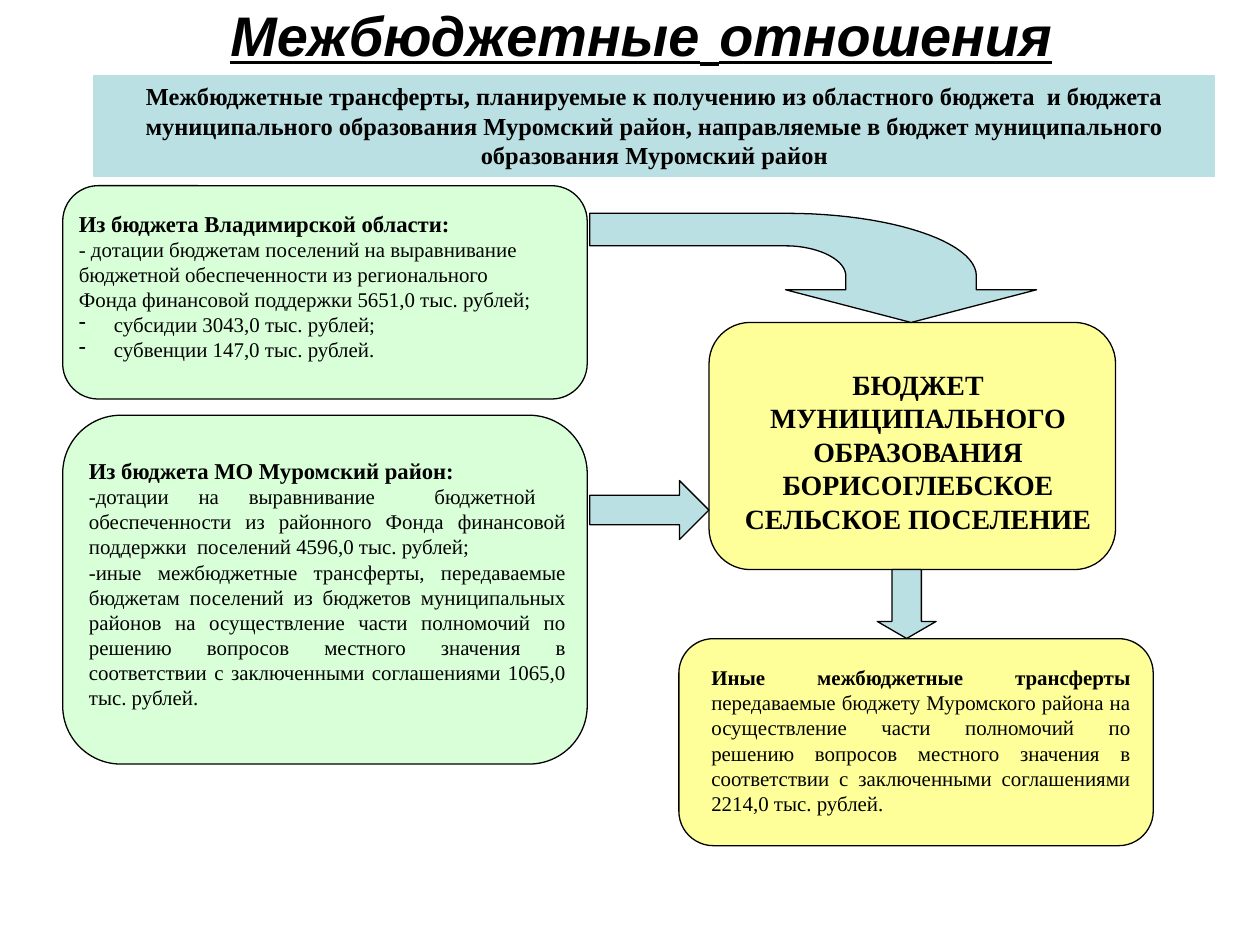
from lxml.etree import SubElement
from pptx import Presentation
from pptx.dml.color import RGBColor
from pptx.enum.shapes import MSO_SHAPE
from pptx.enum.text import MSO_ANCHOR, PP_ALIGN
from pptx.oxml.ns import qn
from pptx.util import Inches, Pt

# Content: a paragraph is (alignment, size, bulleted, [(text, bold), ...])
LEFT, CENTER, JUSTIFY = PP_ALIGN.LEFT, PP_ALIGN.CENTER, PP_ALIGN.JUSTIFY
TITLE = [("Межбюджетные", 32), (" ", 40), ("отношения", 32)]
HEADER = [(CENTER, 14, False, [(
    "Межбюджетные трансферты, планируемые к получению из областного бюджета  и бюджета "
    "муниципального образования Муромский район, направляемые в бюджет муниципального "
    "образования Муромский район", True)])]
REGION = [
    (LEFT, 13, False, [("Из бюджета Владимирской области:", True)]),
    (LEFT, 12, False, [(
        "- дотации бюджетам поселений на выравнивание бюджетной обеспеченности из "
        "регионального Фонда финансовой поддержки 5651,0 тыс. рублей;", False)]),
    (LEFT, 12, True, [("субсидии 3043,0 тыс. рублей;", False)]),
    (LEFT, 12, True, [("субвенции 147,0 тыс. рублей.", False)]),
]
DISTRICT = [
    (LEFT, 13, False, [("Из бюджета МО Муромский район:", True)]),
    (JUSTIFY, 12, False, [(
        "-дотации на выравнивание  бюджетной  обеспеченности из районного Фонда "
        "финансовой поддержки  поселений 4596,0 тыс. рублей;", False)]),
    (JUSTIFY, 12, False, [(
        "-иные межбюджетные трансферты, передаваемые бюджетам поселений из бюджетов "
        "муниципальных районов на осуществление части полномочий по решению вопросов "
        "местного значения в соответствии с заключенными соглашениями 1065,0 тыс. рублей.",
        False)]),
]
BUDGET = [(CENTER, 16, False, [(
    "БЮДЖЕТ МУНИЦИПАЛЬНОГО ОБРАЗОВАНИЯ БОРИСОГЛЕБСКОЕ СЕЛЬСКОЕ ПОСЕЛЕНИЕ", True)])]
OTHER = [(JUSTIFY, 12, False, [
    ("Иные межбюджетные трансферты ", True),
    ("передаваемые бюджету Муромского района на осуществление части полномочий по "
     "решению вопросов местного значения в соответствии с заключенными соглашениями "
     "2214,0 тыс. рублей.", False)])]

COLORS = {"ink": "000000", "green": "CCFFCC", "yellow": "FFFF99", "blue": "BBE0E3"}

# Places: left, top, width, height in percent of the slide
TITLE_PLACE = (5.88, 0, 90.04, 6.13)
HEADER_PLACE = (7.47, 8, 88.94, 10.8)
CARDS = [  # box place, colour, opacity, text place, paragraphs
    ((4.98, 19.73, 41.63, 22.67), "green", 74, (5.28, 21.6, 39.24, 17.6), REGION),
    ((4.98, 44.13, 41.63, 37.07), "green", 74, (6.08, 47.87, 39.84, 28.13), DISTRICT),
    ((56.27, 34.27, 32.27, 26.27), "yellow", 100, (57.87, 38.4, 29.98, 19.2), BUDGET),
    ((53.88, 67.87, 37.65, 22), "yellow", 100, (55.48, 70, 35.26, 17.33), OTHER),
]
ARROWS = [  # preset, place, head length
    (MSO_SHAPE.RIGHT_ARROW, (46.81, 51.07, 9.46, 6.27), 0.5),
    (MSO_SHAPE.DOWN_ARROW, (69.62, 60.53, 4.68, 7.33), 0.29),
]
# Bent arrow: corners and the two bends (start, two controls, end)
HEAD = [(72.31, 34.27), (82.27, 30.8), (77.49, 30.8)]
OUTER_BEND = [(77.49, 29.33), (77.49, 25.73), (70.72, 22.67), (62.35, 22.67)]
TAIL = [(46.81, 22.67), (46.81, 26.13)]
INNER_BEND = [(62.35, 26.13), (64.94, 26.13), (67.13, 27.6), (67.13, 29.33)]
HEAD_END = [(67.13, 30.8), (62.35, 30.8)]

deck = Presentation()
deck.slide_width, deck.slide_height = Inches(10.04), Inches(7.5)
page = deck.slides.add_slide(deck.slide_layouts[5])


def point(x, y):
    return round(deck.slide_width * x / 100), round(deck.slide_height * y / 100)


def area(place):
    return point(*place[:2]) + point(*place[2:])


def color(name):
    return RGBColor.from_string(COLORS[name])


def bend(controls, steps=24):
    """Points along a cubic curve."""
    for step in range(steps + 1):
        t = step / steps
        weights = ((1 - t) ** 3, 3 * t * (1 - t) ** 2, 3 * t * t * (1 - t), t ** 3)
        yield tuple(sum(w * c[axis] for w, c in zip(weights, controls)) for axis in (0, 1))


def paint(shape, fill, line="ink", opacity=100):
    shape.shadow.inherit = False
    shape.fill.solid()
    shape.fill.fore_color.rgb = color(fill)
    shape.line.color.rgb = color(line)
    shape.line.width = Pt(0.75)
    if opacity < 100:
        tint = shape._element.spPr.find(qn("a:solidFill")).find(qn("a:srgbClr"))
        SubElement(tint, qn("a:alpha"), val=str(opacity * 1000))


def write(shape, paragraphs):
    frame = shape.text_frame
    frame.word_wrap = True
    frame.vertical_anchor = MSO_ANCHOR.TOP
    for number, (alignment, size, bulleted, spans) in enumerate(paragraphs):
        para = frame.add_paragraph() if number else frame.paragraphs[0]
        para.alignment = alignment
        para.font.name = "Times New Roman"
        para.font.size = Pt(size)
        para.font.color.rgb = color("ink")
        if bulleted:
            properties = para._p.get_or_add_pPr()
            properties.set("marL", str(Inches(0.28)))
            properties.set("indent", str(-Inches(0.28)))
            bullet = properties.makeelement(qn("a:buChar"), {"char": "-"})
            properties.insert(0, bullet)
        for text, bold in spans:
            span = para.add_run()
            span.text = text
            span.font.bold = bold


# Title
title = page.shapes.title
title.left, title.top, title.width, title.height = area(TITLE_PLACE)
title.text_frame.vertical_anchor = MSO_ANCHOR.MIDDLE
para = title.text_frame.paragraphs[0]
para.alignment = CENTER
para.font.name = "Arial"
para.font.bold = para.font.italic = para.font.underline = True
para.font.color.rgb = color("ink")
for text, size in TITLE:
    span = para.add_run()
    span.text = text
    span.font.size = Pt(size)

# Cards with their text
for place, fill, opacity, text_place, paragraphs in CARDS:
    box = page.shapes.add_shape(MSO_SHAPE.FLOWCHART_ALTERNATE_PROCESS, *area(place))
    paint(box, fill, opacity=opacity)
    write(page.shapes.add_textbox(*area(text_place)), paragraphs)

# Arrows
outline = [point(*spot) for spot in
           [*HEAD, *bend(OUTER_BEND), *TAIL, *bend(INNER_BEND), *HEAD_END]]
builder = page.shapes.build_freeform(*outline[0])
builder.add_line_segments(outline[1:], close=True)
paint(builder.convert_to_shape(), "blue")
for preset, place, head_length in ARROWS:
    arrow = page.shapes.add_shape(preset, *area(place))
    arrow.adjustments[1] = head_length
    paint(arrow, "blue")

# Header band
header = page.shapes.add_shape(MSO_SHAPE.RECTANGLE, *area(HEADER_PLACE))
paint(header, "blue", line="blue")
write(header, HEADER)

deck.save("out.pptx")
